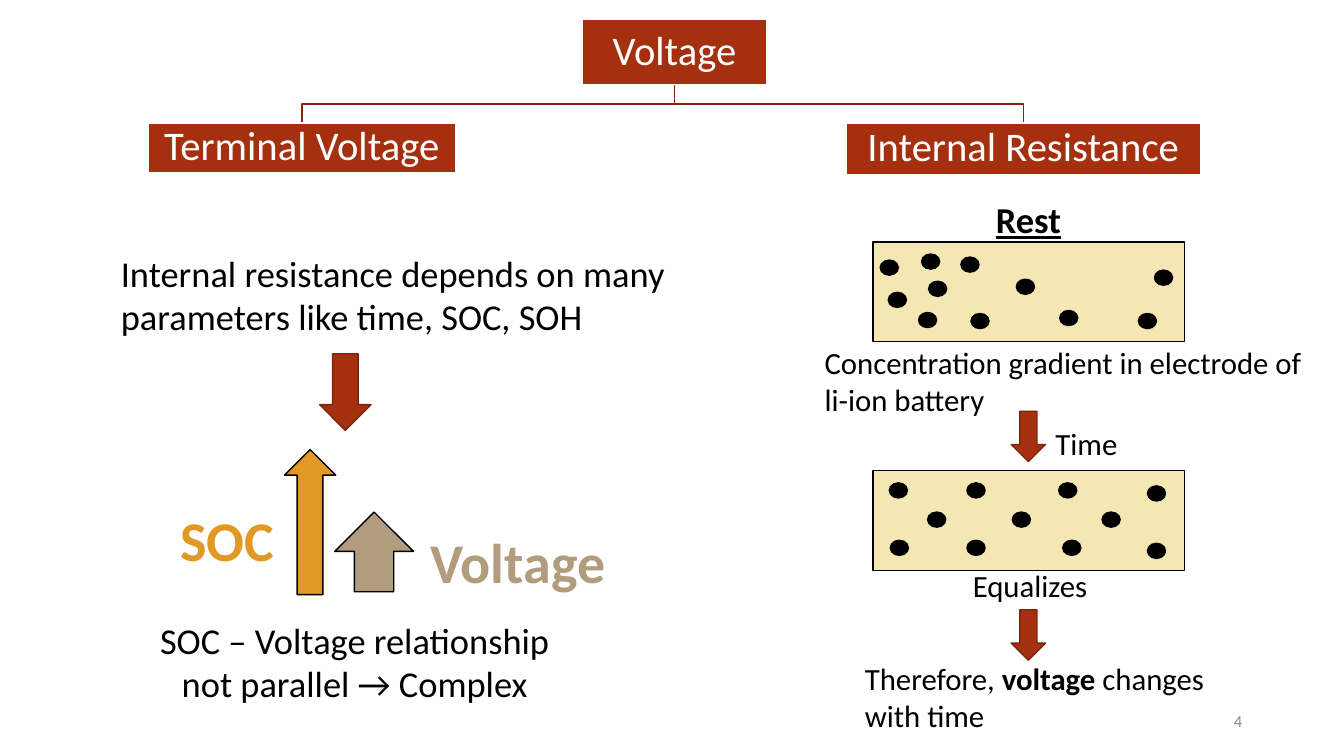
from dataclasses import dataclass

import pptx
import pptx.dml.color
import pptx.enum.shapes
import pptx.enum.text
import pptx.shapes.autoshape
import pptx.shapes.shapetree
import pptx.slide
import pptx.util

Shape = pptx.shapes.autoshape.Shape
ShapeTree = pptx.shapes.shapetree.SlideShapes | pptx.shapes.shapetree.GroupShapes
Align = pptx.enum.text.PP_ALIGN
Anchor = pptx.enum.text.MSO_ANCHOR
Preset = pptx.enum.shapes.MSO_SHAPE

# Grid: the slide is divided into square cells
SLIDE_WIDTH = pptx.util.Inches(13.33)
SLIDE_HEIGHT = pptx.util.Inches(7.5)
COLUMNS, ROWS = 133.3, 75


def columns(count: float) -> int:
    return round(SLIDE_WIDTH * count / COLUMNS)


def rows(count: float) -> int:
    return round(SLIDE_HEIGHT * count / ROWS)


@dataclass(frozen=True)
class Theme:
    font: str = "Calibri"
    rust: str = "A5300F"
    rust_edge: str = "7A240B"
    branch: str = "84260C"
    amber: str = "E19825"
    taupe: str = "B19C7D"
    sand: str = "F5E7B4"
    black: str = "000000"
    white: str = "FFFFFF"
    gray: str = "8C8C8C"
    number_size: int = 12
    caption_size: int = 22
    body_size: int = 26
    heading_size: int = 29
    quantity_size: int = 40
    line_width: int = 1


THEME = Theme()


@dataclass(frozen=True)
class Box:
    """Left and width in columns, top and height in rows."""
    left: float
    top: float
    width: float
    height: float

    def emu(self) -> tuple[int, int, int, int]:
        return columns(self.left), rows(self.top), columns(self.width), rows(self.height)


@dataclass(frozen=True)
class Heading:
    text: str
    box: Box


@dataclass(frozen=True)
class Label:
    text: str
    box: Box
    size: int = THEME.caption_size
    color: str = THEME.black
    bold: bool = False
    underline: bool = False
    align: Align = Align.LEFT
    anchor: Anchor = Anchor.TOP
    wrap: bool = True
    strong: str = ""  # the one bold word within the text


@dataclass(frozen=True)
class Arrow:
    preset: Preset
    box: Box
    fill: str = THEME.rust
    line: str = THEME.rust_edge


@dataclass(frozen=True)
class Electrode:
    top: float
    particles: tuple[tuple[float, float], ...]  # offsets from the electrode's corner


# Heading tree
ROOT = Heading("Voltage", Box(57.8, 1.9, 18.2, 6.5))
BRANCHES = (
    Heading("Terminal Voltage", Box(14.7, 12.2, 30.5, 4.9)),
    Heading("Internal Resistance", Box(83.9, 12.2, 35.2, 5.1)),
)

LABELS = (
    # Left half
    Label("Internal resistance depends on many parameters like time, SOC, SOH",
          Box(11, 24.4, 56.9, 9.8), THEME.body_size),
    Label("SOC", Box(16.9, 49.7, 12, 7.7), THEME.quantity_size, THEME.amber, bold=True),
    Label("Voltage", Box(41.7, 51.8, 21.6, 7.7), THEME.quantity_size, THEME.taupe, bold=True),
    Label("SOC – Voltage relationship not parallel → Complex",
          Box(12.4, 60.8, 45.6, 9.8), THEME.body_size, align=Align.CENTER),
    # Right half
    Label("Rest", Box(97.8, 19.1, 9.6, 5.4), THEME.body_size, bold=True,
          underline=True),
    Label("Concentration gradient in electrode of li-ion battery",
          Box(80.8, 33.6, 49.3, 8.4)),
    Label("Time", Box(103.7, 41.6, 9.7, 4.7)),
    Label("Equalizes", Box(95.5, 55.7, 13.4, 4.7), wrap=False),
    Label("Therefore, voltage changes with time", Box(84.8, 65, 36.3, 8.4),
          strong="voltage"),
    # Slide number
    Label("4", Box(94.2, 69.5, 30, 4), THEME.number_size, THEME.gray,
          align=Align.RIGHT, anchor=Anchor.MIDDLE),
)

ARROWS = (
    Arrow(Preset.DOWN_ARROW, Box(31.7, 35.1, 5.1, 7.6)),
    Arrow(Preset.UP_ARROW, Box(28.2, 44.6, 5.1, 14.4), THEME.amber, THEME.black),
    Arrow(Preset.UP_ARROW, Box(33.2, 50.8, 7.8, 7.9), THEME.taupe, THEME.black),
    Arrow(Preset.DOWN_ARROW, Box(100.3, 40.8, 3.4, 5)),
    Arrow(Preset.DOWN_ARROW, Box(100.3, 60.5, 3.4, 5)),
)

ELECTRODE_LEFT, ELECTRODE_WIDTH, ELECTRODE_HEIGHT = 86.6, 30.9, 9.9
PARTICLE_WIDTH, PARTICLE_HEIGHT = 1.8, 1.5
ELECTRODES = (
    Electrode(24, ((0.7, 1.8), (5.5, 3.9), (4.5, 7), (9.7, 7.1), (8.7, 1.5), (18.5, 6.8),
                   (26.3, 7.1), (27.9, 2.8), (14.2, 3.7), (1.5, 5), (4.8, 1.2))),
    Electrode(46.7, ((1.6, 1.2), (9.3, 1.2), (18.4, 1.2), (27.2, 1.5),
                     (5.4, 4.1), (13.8, 4.1), (22.7, 4.1),
                     (1.7, 6.9), (9.3, 6.9), (18.8, 6.9), (27.2, 7.2))),
)


def rgb(color: str) -> pptx.dml.color.RGBColor:
    return pptx.dml.color.RGBColor.from_string(color)


def outline(shape: Shape, color: str) -> None:
    shape.shadow.inherit = False
    shape.line.color.rgb = rgb(color)
    shape.line.width = pptx.util.Pt(THEME.line_width)


def draw_shape(shapes: ShapeTree, preset: Preset, box: Box, fill: str, line: str) -> Shape:
    shape = shapes.add_shape(preset, *box.emu())
    shape.fill.solid()
    shape.fill.fore_color.rgb = rgb(fill)
    outline(shape, line)
    return shape


def draw_heading(shapes: ShapeTree, heading: Heading) -> None:
    shape = draw_shape(shapes, Preset.RECTANGLE, heading.box, THEME.rust, THEME.white)
    frame = shape.text_frame
    frame.word_wrap = True
    frame.vertical_anchor = Anchor.MIDDLE
    frame.margin_left = frame.margin_right = columns(0.2)
    frame.margin_top = frame.margin_bottom = rows(0.2)
    paragraph = frame.paragraphs[0]
    paragraph.text = heading.text
    paragraph.alignment = Align.CENTER
    paragraph.line_spacing = 0.9
    paragraph.font.name = THEME.font
    paragraph.font.size = pptx.util.Pt(THEME.heading_size)
    paragraph.font.color.rgb = rgb(THEME.white)


def draw_branch(shapes: ShapeTree, parent: Box, child: Box) -> None:
    start_x, end_x = (columns(box.left + box.width / 2) for box in (parent, child))
    start_y, end_y = rows(parent.top + parent.height), rows(child.top)
    middle_y = (start_y + end_y) // 2
    builder = shapes.build_freeform(start_x, start_y)
    builder.add_line_segments(
        [(start_x, middle_y), (end_x, middle_y), (end_x, end_y)], close=False)
    shape = builder.convert_to_shape()
    shape.fill.background()
    outline(shape, THEME.branch)


def draw_label(shapes: ShapeTree, label: Label) -> None:
    frame = shapes.add_textbox(*label.box.emu()).text_frame
    frame.word_wrap = label.wrap
    frame.vertical_anchor = label.anchor
    paragraph = frame.paragraphs[0]
    paragraph.alignment = label.align
    paragraph.font.name = THEME.font
    paragraph.font.size = pptx.util.Pt(label.size)
    paragraph.font.color.rgb = rgb(label.color)
    paragraph.font.bold = label.bold
    paragraph.font.underline = label.underline
    if label.strong:
        before, strong, after = label.text.partition(label.strong)
        for text in (before, strong, after):
            run = paragraph.add_run()
            run.text = text
            run.font.bold = text == strong
    else:
        paragraph.add_run().text = label.text


def draw_electrode(slide: pptx.slide.Slide, electrode: Electrode) -> None:
    shapes = slide.shapes.add_group_shape().shapes
    body = Box(ELECTRODE_LEFT, electrode.top, ELECTRODE_WIDTH, ELECTRODE_HEIGHT)
    draw_shape(shapes, Preset.RECTANGLE, body, THEME.sand, THEME.black)
    for across, down in electrode.particles:
        particle = Box(body.left + across, body.top + down, PARTICLE_WIDTH, PARTICLE_HEIGHT)
        draw_shape(shapes, Preset.OVAL, particle, THEME.black, THEME.black)


def main() -> None:
    presentation = pptx.Presentation()
    presentation.slide_width, presentation.slide_height = SLIDE_WIDTH, SLIDE_HEIGHT
    slide = presentation.slides.add_slide(presentation.slide_layouts[6])
    for electrode in ELECTRODES:
        draw_electrode(slide, electrode)
    for branch in BRANCHES:
        draw_branch(slide.shapes, ROOT.box, branch.box)
    for heading in (ROOT, *BRANCHES):
        draw_heading(slide.shapes, heading)
    for arrow in ARROWS:
        draw_shape(slide.shapes, arrow.preset, arrow.box, arrow.fill, arrow.line)
    for label in LABELS:
        draw_label(slide.shapes, label)
    presentation.save("out.pptx")


if __name__ == "__main__":
    main()
